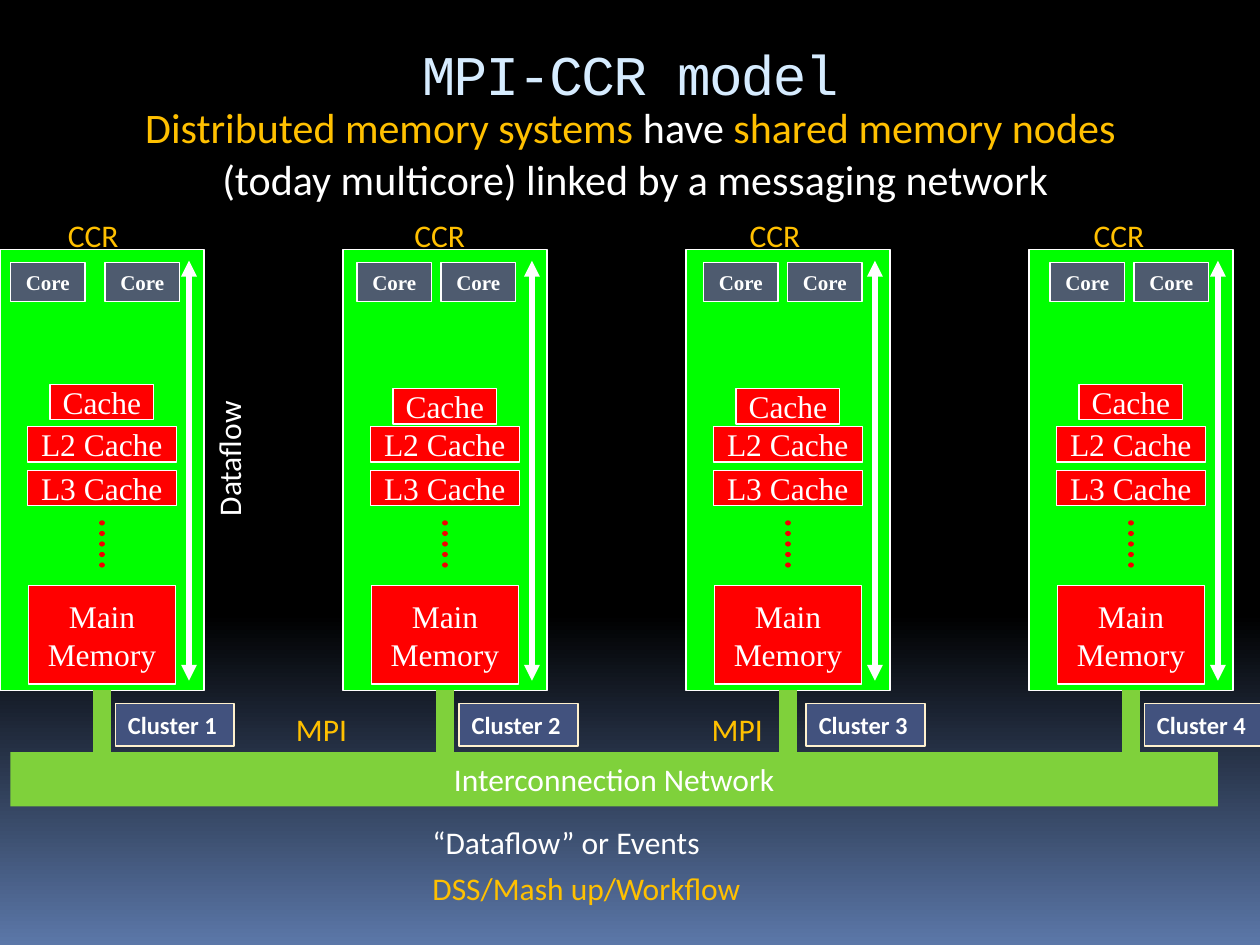
from copy import deepcopy
from dataclasses import dataclass

from lxml import etree
from pptx import Presentation
from pptx.dml.color import RGBColor
from pptx.enum.dml import MSO_LINE
from pptx.enum.shapes import MSO_CONNECTOR, MSO_SHAPE
from pptx.enum.text import MSO_ANCHOR, PP_ALIGN
from pptx.oxml.ns import qn
from pptx.util import Pt

RECTANGLE = MSO_SHAPE.RECTANGLE
STRAIGHT = MSO_CONNECTOR.STRAIGHT
ROUND_DOT = MSO_LINE.ROUND_DOT
CENTER, LEFT = PP_ALIGN.CENTER, PP_ALIGN.LEFT
TOP, MIDDLE = MSO_ANCHOR.TOP, MSO_ANCHOR.MIDDLE

WHITE, BLACK, GOLD, RED = "FFFFFF", "000000", "FFC000", "FF0000"
GREEN, NETWORK_GREEN, SLATE, NAVY = "00FF00", "7FD13B", "4E5B6F", "42527E"
SANS, SERIF, MONO = "Calibri", "Times New Roman", "Courier New"

TOWER_PITCH = 196
TOWER_AXIS = 58.3
TOWER_BOTTOM = 394.5


@dataclass
class Style:
    size: float = 18
    font: str = SANS
    color: str = WHITE
    bold: bool = False


@dataclass
class Box:
    left: float
    top: float
    width: float
    height: float

    def lengths(self) -> tuple:
        return Pt(self.left), Pt(self.top), Pt(self.width), Pt(self.height)


@dataclass
class Tower:
    ccr_left: float
    core_lefts: tuple
    cache_top: float
    cluster_left: float


TOWERS = [
    Tower(31.7, (6, 60), 219.6, 66),
    Tower(229.7, (204, 252), 222, 262.5),
    Tower(421.2, (402, 450), 222, 460.8),
    Tower(617.8, (600, 648), 219.6, 654),
]
SERIF_LABEL = Style(font=SERIF)
CORE_LABEL = Style(12, SERIF, bold=True)
CLUSTER_LABEL = Style(14, bold=True)
GOLD_LABEL = Style(color=GOLD)


def rgb(value: str) -> RGBColor:
    return RGBColor.from_string(value)


def add_run(paragraph, words: str, style: Style):
    run = paragraph.add_run()
    run.text = words
    font = run.font
    font.size, font.name, font.bold = Pt(style.size), style.font, style.bold
    font.color.rgb = rgb(style.color)


def set_frame(frame, anchor, left: float = 0, top: float = 0):
    frame.word_wrap = True
    frame.vertical_anchor = anchor
    frame.margin_left, frame.margin_top = Pt(left), Pt(top)
    frame.margin_right = frame.margin_bottom = 0


def add_paragraphs(frame, lines: list, align):
    """Write each line, a list of (words, style) pairs, as one paragraph."""
    for index, line in enumerate(lines):
        paragraph = frame.add_paragraph() if index else frame.paragraphs[0]
        paragraph.alignment = align
        for words, style in line:
            add_run(paragraph, words, style)


def add_text(slide, box: Box, lines: list, align=LEFT, anchor=TOP,
             left: float = 7.2, top: float = 3.6):
    text = slide.shapes.add_textbox(*box.lengths())
    set_frame(text.text_frame, anchor, left, top)
    add_paragraphs(text.text_frame, lines, align)
    return text


def add_block(slide, box: Box, fill: str, words=(), style=SERIF_LABEL, outline=WHITE,
              weight: float = 0.75, align=CENTER, left: float = 0):
    block = slide.shapes.add_shape(RECTANGLE, *box.lengths())
    block.shadow.inherit = False
    block.fill.solid()
    block.fill.fore_color.rgb = rgb(fill)
    if outline:
        block.line.color.rgb = rgb(outline)
        block.line.width = Pt(weight)
    else:
        block.line.fill.background()
    set_frame(block.text_frame, MIDDLE, left)
    add_paragraphs(block.text_frame, [[(word, style)] for word in words], align)


def add_vertical(slide, x: float, top: float, bottom: float, color: str, weight: float):
    line = slide.shapes.add_connector(STRAIGHT, Pt(x), Pt(top), Pt(x), Pt(bottom))
    line.line.color.rgb = rgb(color)
    line.line.width = Pt(weight)
    etree.SubElement(line.element.spPr, qn("a:effectLst"))
    return line


def add_dataflow_arrow(slide, x: float):
    arrow = add_vertical(slide, x, 149, 389, WHITE, 3)
    outline = arrow.element.spPr.find(qn("a:ln"))
    for end in ("a:headEnd", "a:tailEnd"):
        etree.SubElement(outline, qn(end), type="triangle")


def add_dots(slide, x: float):
    dots = add_vertical(slide, x, 298.8, 327, "F00000", 3)
    dots.line.dash_style = ROUND_DOT
    dots.element.spPr.find(qn("a:ln")).set("cap", "rnd")


def add_tower(slide, number: int, tower: Tower):
    left = number * TOWER_PITCH
    axis = left + TOWER_AXIS
    add_block(slide, Box(left, 142.5, 116.6, 252), GREEN)
    add_block(slide, Box(left + 28.6, tower.cache_top, 59.3, 20.3), RED, ["Cache"])
    for level, top in (("L2 Cache", 243.8), ("L3 Cache", 268.8)):
        add_block(slide, Box(left + 15.6, top, 85.2, 20.3), RED, [level])
    add_dots(slide, axis)
    add_block(slide, Box(left + 16.3, 334.6, 84, 56.2), RED, ["Main", "Memory"])
    add_vertical(slide, axis, TOWER_BOTTOM, 437, NETWORK_GREEN, 10)
    add_dataflow_arrow(slide, left + 108)
    for core_left in tower.core_lefts:
        add_block(slide, Box(core_left, 149.8, 42.6, 22.3), SLATE, ["Core"], CORE_LABEL)
    add_block(slide, Box(tower.cluster_left, 402, 67.7, 24.5), NAVY,
              [f"Cluster {number + 1}"], CLUSTER_LABEL, "FFF1CE", 1, LEFT, 7.2)
    add_text(slide, Box(tower.ccr_left, 120.2, 46.8, 28.8), [[("CCR", GOLD_LABEL)]])


def paint_background(slide):
    fill = slide.background.fill
    fill.gradient()
    fill.gradient_angle = 270
    start, end = fill.gradient_stops
    start.color.rgb, start.position = rgb(BLACK), 0
    end.color.rgb, end.position = rgb("5B77A8"), 1
    first = slide.element.find(".//" + qn("a:gs"))
    middle = deepcopy(first)
    middle.set("pos", "65000")
    first.addnext(middle)


def add_heading(slide):
    title = add_text(slide, Box(168, 18, 384, 48),
                     [[("MPI-CCR model", Style(32, MONO, "D6ECFF"))]],
                     CENTER, MIDDLE, 0, 0)
    title.element.find(".//" + qn("a:rPr")).set("spc", "-100")
    plain, strong = Style(24), Style(24, color=GOLD)
    summary = add_text(slide, Box(0, 60, 720, 72), [
        [("Distributed memory systems", strong), (" have ", plain),
         ("shared memory nodes ", strong)],
        [("(today multicore) linked by a messaging network", plain)],
    ], CENTER, left=6)
    for paragraph in summary.text_frame.paragraphs:
        paragraph.line_spacing = 0.8
        paragraph.space_before = Pt(7)


def main():
    deck = Presentation()
    deck.slide_width, deck.slide_height = Pt(720), Pt(540)
    slide = deck.slides.add_slide(deck.slide_layouts[6])
    paint_background(slide)
    add_heading(slide)
    for number, tower in enumerate(TOWERS):
        add_tower(slide, number, tower)
    add_block(slide, Box(6, 429.8, 690, 31), NETWORK_GREEN,
              ["Interconnection Network"], Style(), None)
    dataflow = add_text(slide, Box(85.7, 240.5, 92.2, 31), [[("Dataflow", Style())]])
    dataflow.rotation = 270
    for mpi_left in (162, 399.6):
        add_text(slide, Box(mpi_left, 402, 44, 28.8), [[("MPI", GOLD_LABEL)]])
    add_text(slide, Box(240, 466.6, 172, 28.8), [[("“Dataflow” or Events", Style())]])
    add_text(slide, Box(240, 493.2, 193, 28.8), [[("DSS/Mash up/Workflow", GOLD_LABEL)]])
    deck.save("out.pptx")


if __name__ == "__main__":
    main()
